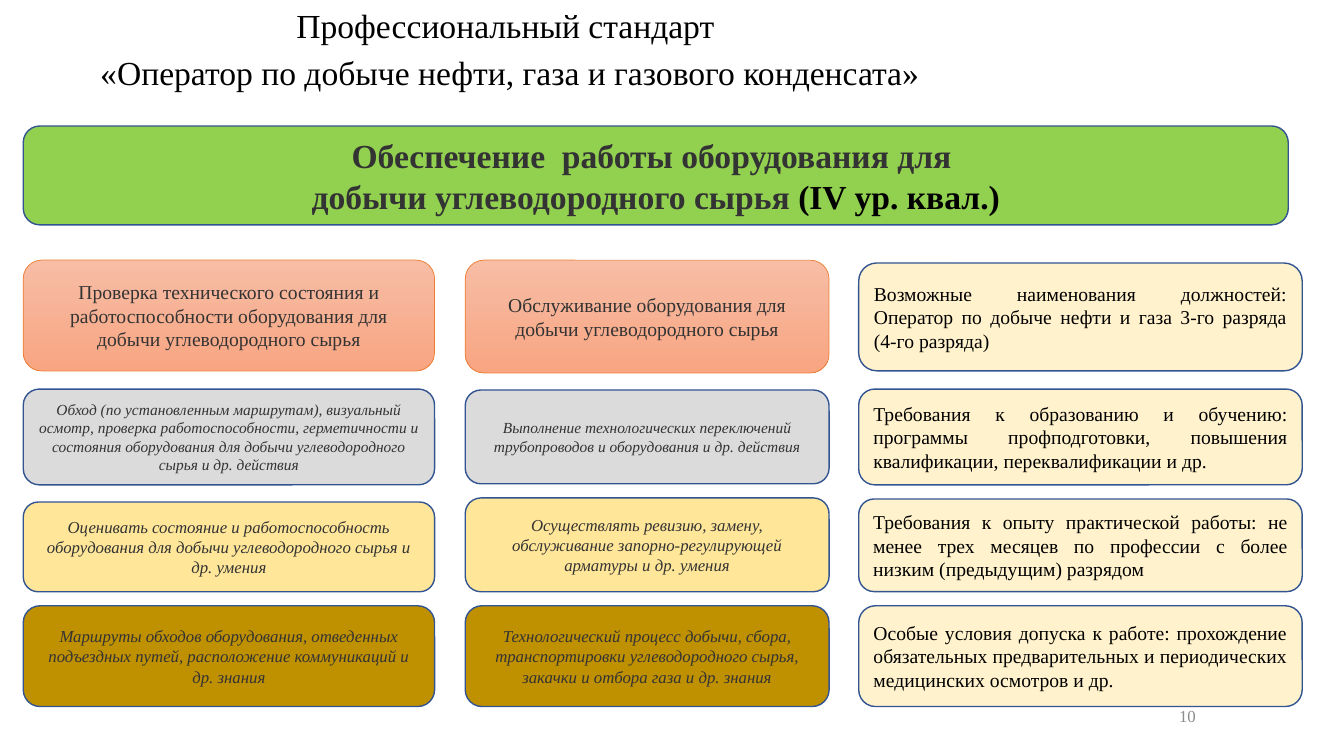
from pptx import Presentation
from pptx import util as u
from pptx.dml.color import RGBColor
from pptx.enum import shapes, text

FONT = "Times New Roman"
CENTER, JUSTIFY = text.PP_ALIGN.CENTER, text.PP_ALIGN.JUSTIFY


def color(value):
    return RGBColor.from_string(value)


def write(shape, paragraphs, alignment, ink, anchor=text.MSO_ANCHOR.MIDDLE, **font_format):
    """Fill a shape with paragraphs, each given as a list of run texts."""
    frame = shape.text_frame
    frame.word_wrap = True
    frame.auto_size = text.MSO_AUTO_SIZE.NONE
    frame.vertical_anchor = anchor
    for index, runs in enumerate(paragraphs):
        paragraph = frame.add_paragraph() if index else frame.paragraphs[0]
        paragraph.alignment = alignment
        for words in runs:
            run = paragraph.add_run()
            run.text = words
            run.font.name = FONT
            run.font.color.rgb = color(ink)
            for name, value in font_format.items():
                setattr(run.font, name, value)


presentation = Presentation()
presentation.slide_width, presentation.slide_height = u.Pt(960), u.Pt(540)
slide = presentation.slides.add_slide(presentation.slide_layouts[5])

# Title
title = slide.shapes.title
title_box = {"left": -15.1, "top": -4.3, "width": 735.8, "height": 74.2}
for name, value in title_box.items():
    setattr(title, name, u.Pt(value))
write(title, [["Профессиональный стандарт "],
              ["«Оператор по добыче нефти, газа и газового конденсата»"]],
      CENTER, "000000", text.MSO_ANCHOR.TOP, size=u.Pt(24))
for paragraph in title.text_frame.paragraphs:
    paragraph.line_spacing = 1.15
    paragraph._p.get_or_add_pPr().set("indent", str(u.Pt(22.5)))

# Banner
banner = slide.shapes.add_shape(shapes.MSO_SHAPE.ROUNDED_RECTANGLE,
                                u.Pt(16.6), u.Pt(90), u.Pt(903.6), u.Pt(70.6))
banner.shadow.inherit = False
banner.fill.solid()
banner.fill.fore_color.rgb = color("92D050")
banner.line.color.rgb = color("325491")
banner.line.width = u.Pt(1)
write(banner, [["Обеспечение  работы оборудования для "],
               ["добычи углеводородного сырья ", "(IV ур. квал.)"]],
      CENTER, "333333", size=u.Pt(24), bold=True)
banner.text_frame.paragraphs[1].runs[1].font.color.rgb = color("000000")

# Cards: left and width of each column, then top, height and text of each card
function_fills = [None, "DBDBDB", "FFE699", "BF9000"]  # None: gradient
function_sizes = [14, 11, 12, 12]
columns = [
    (16.6, 293.8, [
        (185.8, 79.2, "Проверка технического состояния и работоспособности оборудования "
                      "для добычи углеводородного сырья"),
        (277.9, 68.4, "Обход (по установленным маршрутам), визуальный осмотр, проверка "
                      "работоспособности, герметичности и состояния оборудования для "
                      "добычи углеводородного сырья и др. действия"),
        (358.6, 64.1, "Оценивать состояние и работоспособность оборудования для добычи "
                      "углеводородного сырья и др. умения"),
        (432.7, 72, "Маршруты обходов оборудования, отведенных подъездных путей, "
                    "расположение коммуникаций и др. знания"),
    ]),
    (332.3, 259.9, [
        (185.8, 80.6, "Обслуживание оборудования для добычи углеводородного сырья"),
        (278.6, 67, "Выполнение технологических переключений трубопроводов и "
                    "оборудования и др. действия"),
        (355.7, 67, "Осуществлять ревизию, замену, обслуживание "
                    "запорно-регулирующей арматуры и др. умения"),
        (432.7, 72, "Технологический процесс добычи, сбора, транспортировки "
                    "углеводородного сырья, закачки и отбора газа и др. знания"),
    ]),
    (613.4, 316.8, [
        (187.9, 77, "Возможные наименования должностей: Оператор по добыче нефти и "
                    "газа 3-го разряда (4-го разряда)"),
        (277.9, 68.4, "Требования к образованию и обучению: программы "
                      "профподготовки, повышения квалификации, переквалификации и др."),
        (356.4, 66.2, "Требования к опыту практической работы: не менее трех месяцев "
                      "по профессии с более низким (предыдущим) разрядом"),
        (432.7, 72, "Особые условия допуска к работе: прохождение обязательных "
                    "предварительных и периодических медицинских осмотров и др."),
    ]),
]
for column, (left, width, cards) in enumerate(columns):
    is_requirement = column == 2
    for row, (top, height, words) in enumerate(cards):
        card = slide.shapes.add_shape(shapes.MSO_SHAPE.ROUNDED_RECTANGLE,
                                      u.Pt(left), u.Pt(top), u.Pt(width), u.Pt(height))
        card.shadow.inherit = False
        fill = "FFF2CC" if is_requirement else function_fills[row]
        if fill:
            card.fill.solid()
            card.fill.fore_color.rgb = color(fill)
        else:
            card.fill.gradient()
            card.fill.gradient_angle = 270
            for stop, position, shade in zip(card.fill.gradient_stops, (0, 1),
                                             ("F7BDA5", "F8A582")):
                stop.position = position
                stop.color.rgb = color(shade)
        card.line.color.rgb = color("325491" if fill else "ED7D31")
        card.line.width = u.Pt(1 if fill else 0.5)
        if is_requirement:
            write(card, [[words]], JUSTIFY, "000000", size=u.Pt(14))
        else:
            write(card, [[words]], CENTER, "333333",
                  size=u.Pt(function_sizes[row]), italic=row > 0)

# Slide number
number = slide.shapes.add_textbox(u.Pt(740.2), u.Pt(496.8), u.Pt(216), u.Pt(28.8))
write(number, [["10"]], CENTER, "8C8C8C", size=u.Pt(12))

presentation.save("out.pptx")
